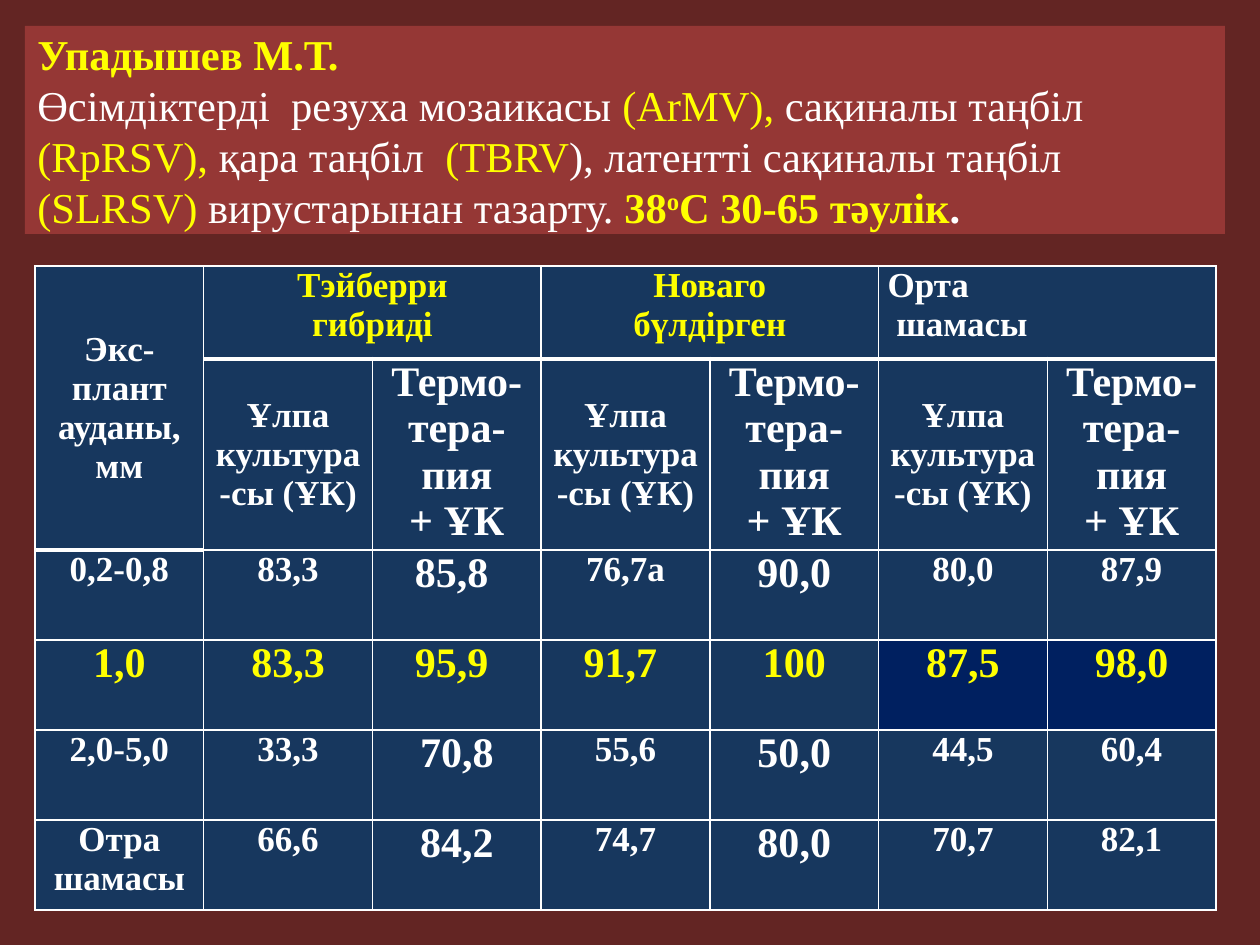
from lxml.etree import SubElement
from pptx import Presentation
from pptx.dml.color import RGBColor
from pptx.enum.shapes import MSO_SHAPE as Shape
from pptx.enum.text import MSO_ANCHOR as Anchor, PP_ALIGN as Align
from pptx.oxml.ns import qn
from pptx.util import Pt

PX = 914400 / 126
WHITE, YELLOW, NAVY, DARK_BLUE = "FFFFFF", "FFFF00", "17375E", "002060"


def px(length):
    return round(length * PX)


def paint(target, color):
    """Give a fill or a font a solid colour."""
    if hasattr(target, "solid"):
        target.solid()
        target.fore_color.rgb = RGBColor.from_string(color)
    else:
        target.color.rgb = RGBColor.from_string(color)


deck = Presentation()
deck.slide_width, deck.slide_height = px(1260), px(945)
slide = deck.slides.add_slide(deck.slide_layouts[6])
paint(slide.background.fill, "632523")

# Heading: author and the viruses treated
heading = slide.shapes.add_shape(Shape.RECTANGLE, px(25), px(26), px(1200), px(208))
heading.shadow.inherit = False
paint(heading.fill, "953735")
heading.line.fill.background()
frame = heading.text_frame
frame.word_wrap = True
frame.vertical_anchor = Anchor.MIDDLE
frame.margin_top = frame.margin_bottom = 0
summary = frame.paragraphs[0]
summary.alignment = Align.LEFT
summary.line_spacing = Pt(29.1)

# text, colour, bold
phrases = [
    ("Упадышев М.Т. ", YELLOW, True),
    ("Өсімдіктерді  резуха мозаикасы ", WHITE, False),
    ("(ArMV), ", YELLOW, False),
    ("сақиналы таңбіл  ", WHITE, False),
    ("(RpRSV), ", YELLOW, False),
    ("қара таңбіл  ", WHITE, False),
    ("(TBRV", YELLOW, False),
    ("), латентті сақиналы таңбіл  ", WHITE, False),
    ("(SLRSV) ", YELLOW, False),
    ("вирустарынан тазарту. ", WHITE, False),
    ("38", YELLOW, True),
    ("о", YELLOW, True),
    ("С 30-65 тәулік", YELLOW, True),
    (".", WHITE, True),
]
for index, (text, color, bold) in enumerate(phrases):
    if index == 1:
        summary.add_line_break()
    run = summary.add_run()
    run.text = text
    run.font.name, run.font.size, run.font.bold = "Times New Roman", Pt(24.3), bold
    paint(run.font, color)
    if text == "о":  # degree sign
        run.font._element.set("baseline", "30000")

# Table of results by explant area
culture, therapy = "Ұлпа культура-сы (ҰК)", "Термо-тера-пия\n+ ҰК"
rows = [
    ["Экс-плант ауданы, мм", "Тэйберри\nгибриді", "", "Новаго\nбүлдірген", "", "Орта\n шамасы", ""],
    [""] + [culture, therapy] * 3,
    ["0,2-0,8", "83,3", "85,8 ", "76,7а", "90,0", "80,0", "87,9"],
    ["1,0", "83,3", "95,9 ", "91,7 ", "100", "87,5", "98,0"],
    ["2,0-5,0", "33,3", "70,8", "55,6", "50,0", "44,5", "60,4"],
    ["Отра шамасы", "66,6", "84,2", "74,7", "80,0", "70,7", "82,1"],
]
heights = [93, 191, 90, 90, 90, 90]
BEST = 3  # highlighted row
results = slide.shapes.add_table(
    len(rows), 7, px(35), px(266), px(1181), px(sum(heights))).table
for column in results.columns:
    column.width = px(1181 / 7)
for row, height in zip(results.rows, heights):
    row.height = px(height)
results.cell(0, 0).merge(results.cell(1, 0))
for c in (1, 3, 5):
    results.cell(0, c).merge(results.cell(0, c + 1))

for r, texts in enumerate(rows):
    for c, text in enumerate(texts):
        cell = results.cell(r, c)
        # Borders: thick below the top header row and the merged corner
        thick_top = (r == 1 and c > 0) or (r == 2 and c == 0)
        thick_bottom = r == 0 or (r == 1 and c == 0)
        properties = cell._tc.get_or_add_tcPr()
        for side, thick in zip("LRTB", (False, False, thick_top, thick_bottom)):
            border = SubElement(properties, qn(f"a:ln{side}"), w=str(Pt(3 if thick else 1)))
            SubElement(SubElement(border, qn("a:solidFill")), qn("a:srgbClr"), val=WHITE)
        cell.fill.solid()
        paint(cell.fill, DARK_BLUE if r == BEST and c >= 5 else NAVY)

        if not text:
            continue
        cell.margin_left = cell.margin_right = px(9)
        cell.margin_top = cell.margin_bottom = 0
        middle = text == culture or (r, c) == (0, 0)
        cell.vertical_anchor = Anchor.MIDDLE if middle else Anchor.TOP
        large = r == BEST or text == therapy or (r > 1 and c in (2, 4))
        yellow = r == BEST or (r == 0 and c in (1, 3))
        cell.text_frame.text = text
        for paragraph in cell.text_frame.paragraphs:
            paragraph.alignment = Align.LEFT if (r, c) == (0, 5) else Align.CENTER
            font = paragraph.runs[0].font
            font.name, font.size, font.bold = "Times New Roman", Pt(24 if large else 20), True
            paint(font, YELLOW if yellow else WHITE)

deck.save("out.pptx")
